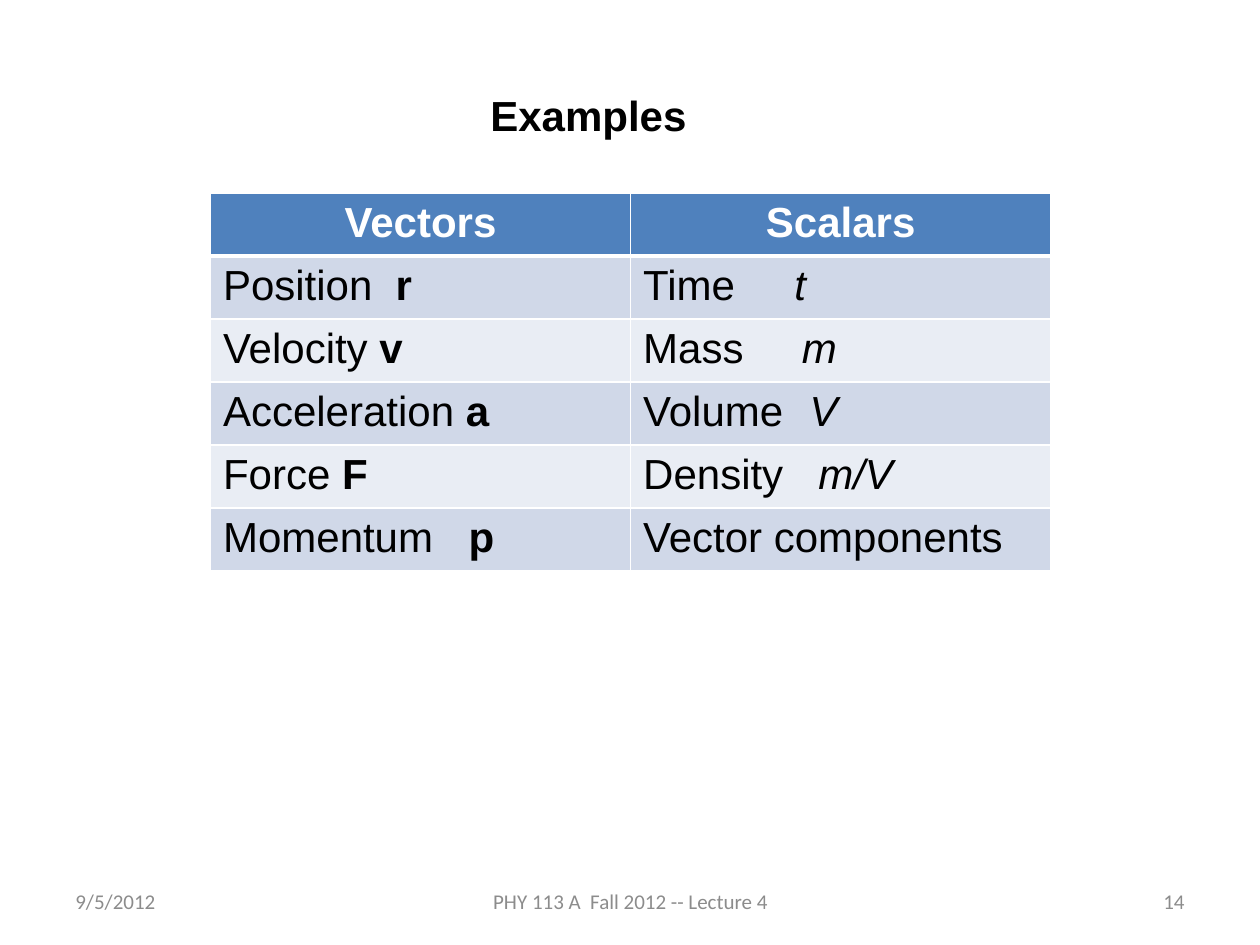
from dataclasses import dataclass

from lxml.etree import SubElement
from pptx import Presentation
from pptx.dml.color import RGBColor as Color
from pptx.enum.text import MSO_ANCHOR as Anchor, PP_ALIGN as Align
from pptx.oxml.ns import qn
from pptx.util import Inches, Pt


@dataclass(frozen=True)
class Theme:
    heading_font: str = "Arial"
    footer_font: str = "Calibri"
    heading_size: int = 24
    footer_size: int = 12
    black: str = "000000"
    white: str = "FFFFFF"
    gray: str = "8C8C8C"
    header: str = "4F81BD"
    bands: tuple = ("D0D8E8", "E9EDF4")
    thin: int = 1
    thick: int = 3


class SlideBuilder:
    def __init__(self, slide, theme):
        self.slide = slide
        self.theme = theme

    def run(self, paragraph, text, color, bold=False, italic=False, footer=False):
        theme = self.theme
        run = paragraph.add_run()
        run.text = text
        font = run.font
        font.name = theme.footer_font if footer else theme.heading_font
        font.size = Pt(theme.footer_size if footer else theme.heading_size)
        font.color.rgb = Color.from_string(color)
        font.bold = bold
        font.italic = italic

    def text_box(self, left, top, width, height, anchor, align):
        box = self.slide.shapes.add_textbox(
            Inches(left), Inches(top), Inches(width), Inches(height))
        frame = box.text_frame
        frame.word_wrap = True
        frame.vertical_anchor = anchor
        paragraph = frame.paragraphs[0]
        paragraph.alignment = align
        return paragraph

    def title(self, text):
        paragraph = self.text_box(0.92, 0.66, 7.5, 1.31, Anchor.TOP, Align.CENTER)
        self.run(paragraph, text, self.theme.black, bold=True)

    def footer(self, text, left, width, align):
        paragraph = self.text_box(left, 6.95, width, 0.4, Anchor.MIDDLE, align)
        self.run(paragraph, text, self.theme.gray, footer=True)

    def borders(self, cell, top, bottom):
        thin = self.theme.thin
        properties = cell._tc.get_or_add_tcPr()
        for side, width in (("L", thin), ("R", thin), ("T", top), ("B", bottom)):
            line = SubElement(properties, qn(f"a:ln{side}"), w=str(Pt(width)))
            fill = SubElement(line, qn("a:solidFill"))
            SubElement(fill, qn("a:srgbClr"), val=self.theme.white)

    def tab_stop(self, paragraph, position):
        properties = paragraph._p.get_or_add_pPr()
        stops = SubElement(properties, qn("a:tabLst"))
        SubElement(stops, qn("a:tab"), pos=str(Inches(position)), algn="l")

    def quantity(self, paragraph, name, symbol, stop, italic):
        gap = "\t" if stop else " " if symbol else ""
        if stop:
            self.tab_stop(paragraph, stop)
        self.run(paragraph, name + gap, self.theme.black)
        if symbol:
            self.run(paragraph, symbol, self.theme.black, bold=not italic, italic=italic)

    def table(self, headings, rows, left, top, width, height):
        theme = self.theme
        table = self.slide.shapes.add_table(
            len(rows) + 1, len(headings),
            Inches(left), Inches(top), Inches(width), Inches(height)).table
        table.horz_banding = False
        for column, heading in enumerate(headings):
            cell = table.cell(0, column)
            self.borders(cell, theme.thin, theme.thick)
            self.fill(cell, theme.header)
            paragraph = cell.text_frame.paragraphs[0]
            paragraph.alignment = Align.CENTER
            self.run(paragraph, heading, theme.white, bold=True)
        for index, row in enumerate(rows):
            for column, entry in enumerate(row):
                cell = table.cell(index + 1, column)
                self.borders(cell, theme.thin if index else theme.thick, theme.thin)
                self.fill(cell, theme.bands[index % 2])
                self.quantity(cell.text_frame.paragraphs[0], *entry, italic=column == 1)

    def fill(self, cell, color):
        cell.fill.solid()
        cell.fill.fore_color.rgb = Color.from_string(color)


QUANTITIES = [
    (("Position", "r", 1.37), ("Time", "t", 1.2)),
    (("Velocity", "v", None), ("Mass", "m", 1.26)),
    (("Acceleration", "a", None), ("Volume", "V", 1.32)),
    (("Force", "F", None), ("Density", "m/V", 1.39)),
    (("Momentum", "p", 1.95), ("Vector components", "", None)),
]


def main():
    presentation = Presentation()
    presentation.slide_width = Inches(10)
    presentation.slide_height = Inches(7.5)
    slide = presentation.slides.add_slide(presentation.slide_layouts[6])
    builder = SlideBuilder(slide, Theme())
    builder.footer("9/5/2012", 0.5, 2.33, Align.LEFT)
    builder.footer("PHY 113 A  Fall 2012 -- Lecture 4", 3.42, 3.17, Align.CENTER)
    builder.footer("14", 7.17, 2.33, Align.RIGHT)
    builder.title("Examples")
    builder.table(("Vectors", "Scalars"), QUANTITIES, 1.67, 1.53, 6.67, 3)
    presentation.save("out.pptx")


if __name__ == "__main__":
    main()
